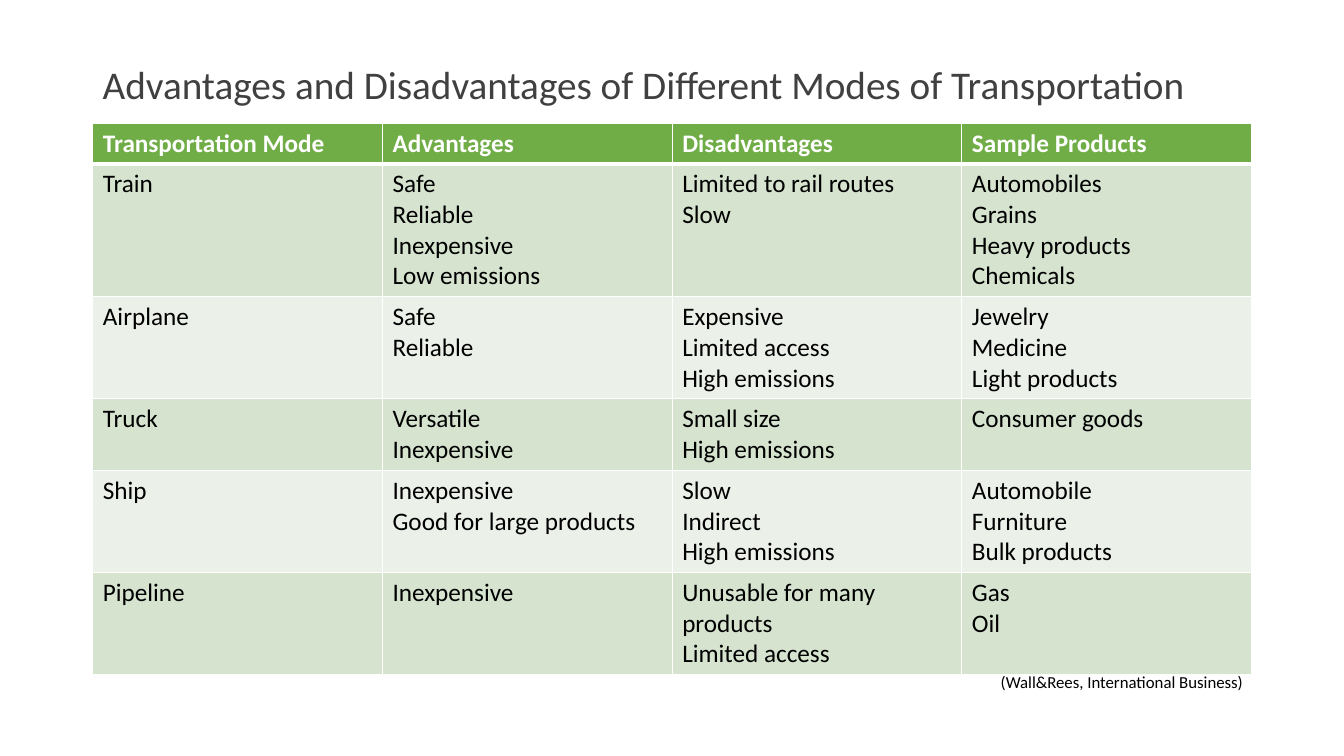
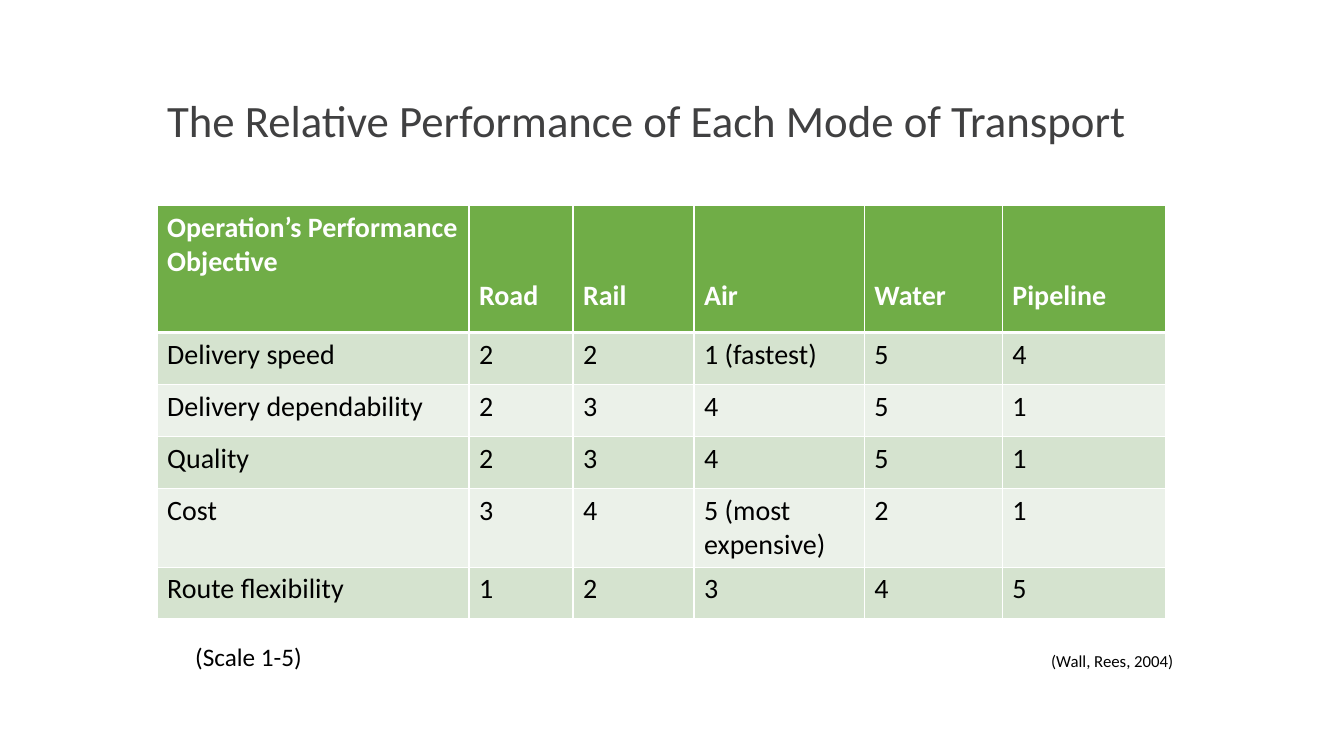
from lxml import etree
from pptx import Presentation
from pptx.dml.color import RGBColor
from pptx.enum import text
from pptx.oxml.ns import qn
from pptx.util import Cm, Pt

FONT = "Calibri"
TITLE = RGBColor(0x40, 0x40, 0x41)
BLACK = RGBColor(0, 0, 0)
WHITE = RGBColor(0xFF, 0xFF, 0xFF)
GREEN = RGBColor(0x70, 0xAD, 0x47)
BANDS = RGBColor(0xD5, 0xE3, 0xCF), RGBColor(0xEB, 0xF1, 0xE9)

# Each line of a cell is one paragraph.
MODES = [
    ("Transportation Mode", "Advantages", "Disadvantages", "Sample Products"),
    ("Train", "Safe\nReliable\nInexpensive\nLow emissions",
     "Limited to rail routes\nSlow",
     "Automobiles\nGrains\nHeavy products\nChemicals"),
    ("Airplane", "Safe\nReliable", "Expensive\nLimited access\nHigh emissions",
     "Jewelry\nMedicine\nLight products"),
    ("Truck", "Versatile\nInexpensive", "Small size\nHigh emissions", "Consumer goods"),
    ("Ship", "Inexpensive\nGood for large products",
     "Slow\nIndirect\nHigh emissions", "Automobile\nFurniture\nBulk products"),
    ("Pipeline", "Inexpensive", "Unusable for many products\nLimited access", "Gas\nOil"),
]
MODE_LINES = [1, 4, 3, 2, 3, 3]

PERFORMANCE = [
    ("Operation’s Performance Objective", "Road", "Rail", "Air", "Water", "Pipeline"),
    ("Delivery speed", "2", "2", "1 (fastest)", "5", "4"),
    ("Delivery dependability", "2", "3", "4", "5", "1"),
    ("Quality", "2", "3", "4", "5", "1"),
    ("Cost", "3", "4", "5 (most expensive)", "2", "1"),
    ("Route flexibility", "1", "2", "3", "4", "5"),
]

# Lengths are centimetres; a box is left, top, width, height.
SLIDES = [
    dict(title="Advantages and Disadvantages of Different Modes of Transportation",
         title_box=(2.34, 0, 29.2, 4.37), title_size=28,
         rows=MODES, at=(2.34, 3.1), size=18, widths=[7.3] * 4,
         heights=[0.25 + 0.775 * n for n in MODE_LINES], low_labels=False,
         notes=[("(Wall&Rees, International Business)", (24.97, 16.8, 8.5, 0.77), 12)]),
    dict(title="The Relative Performance of Each Mode of Transport",
         title_box=(3.96, 1.27, 29.2, 3.68), title_size=32,
         rows=PERFORMANCE, at=(3.96, 5.18), size=20,
         widths=[7.86, 2.62, 3.05, 4.29, 3.48, 4.11],
         heights=[3.2, 1.31, 1.31, 1.31, 1.98, 1.31], low_labels=True,
         notes=[("(Scale 1-5)", (4.67, 16.03, 3.5, 1.02), 18),
                ("(Wall, Rees, 2004)", (26.24, 16.28, 7, 0.77), 12)]),
]


def style(tf, size, color, bold=False):
    for p in tf.paragraphs:
        for r in p.runs:
            r.font.name, r.font.size, r.font.bold = FONT, Pt(size), bold
            r.font.color.rgb = color


def add_text(s, words, box, size, color=BLACK):
    tf = s.shapes.add_textbox(*map(Cm, box)).text_frame
    tf.word_wrap = True
    tf.text = words
    style(tf, size, color)
    return tf


def add_title(s, words, box, size):
    tf = add_text(s, words, box, size, TITLE)
    tf.vertical_anchor = text.MSO_ANCHOR.MIDDLE
    tf.paragraphs[0].line_spacing = 0.9


def set_borders(cell, top, bottom):
    """Draw white cell borders; call before filling, as the XML order matters."""
    tc_pr = cell._tc.get_or_add_tcPr()
    for side, width in dict(L=1, R=1, T=top, B=bottom).items():
        ln = etree.SubElement(tc_pr, qn(f"a:ln{side}"), w=str(Pt(width)))
        fill = etree.SubElement(ln, qn("a:solidFill"))
        etree.SubElement(fill, qn("a:srgbClr"), val=str(WHITE))


def add_table(s, rows, at, widths, heights, size, low_labels):
    """low_labels sets the header labels after the first near the row's foot."""
    left, top = map(Cm, at)
    table = s.shapes.add_table(len(rows), len(widths), left, top,
                               Cm(sum(widths)), Cm(sum(heights))).table
    for col, width in zip(table.columns, widths):
        col.width = Cm(width)
    for i, (row, height) in enumerate(zip(rows, heights)):
        table.rows[i].height = Cm(height)
        header = i == 0
        for j, words in enumerate(row):
            cell = table.cell(i, j)
            cell.text = words
            style(cell.text_frame, size, WHITE if header else BLACK, header)
            set_borders(cell, 3 if i == 1 else 1, 3 if header else 1)
            cell.fill.solid()
            cell.fill.fore_color.rgb = GREEN if header else BANDS[(i - 1) % 2]
            if header and low_labels and j:
                cell.vertical_anchor = text.MSO_ANCHOR.BOTTOM
                cell.margin_bottom = Cm(0.5)


def main():
    prs = Presentation()
    prs.slide_width, prs.slide_height = Cm(33.87), Cm(19.05)
    for d in SLIDES:
        s = prs.slides.add_slide(prs.slide_layouts[6])
        add_title(s, d["title"], d["title_box"], d["title_size"])
        add_table(s, d["rows"], d["at"], d["widths"], d["heights"],
                  d["size"], d["low_labels"])
        for note in d["notes"]:
            add_text(s, *note)
    prs.save("out.pptx")


if __name__ == "__main__":
    main()
